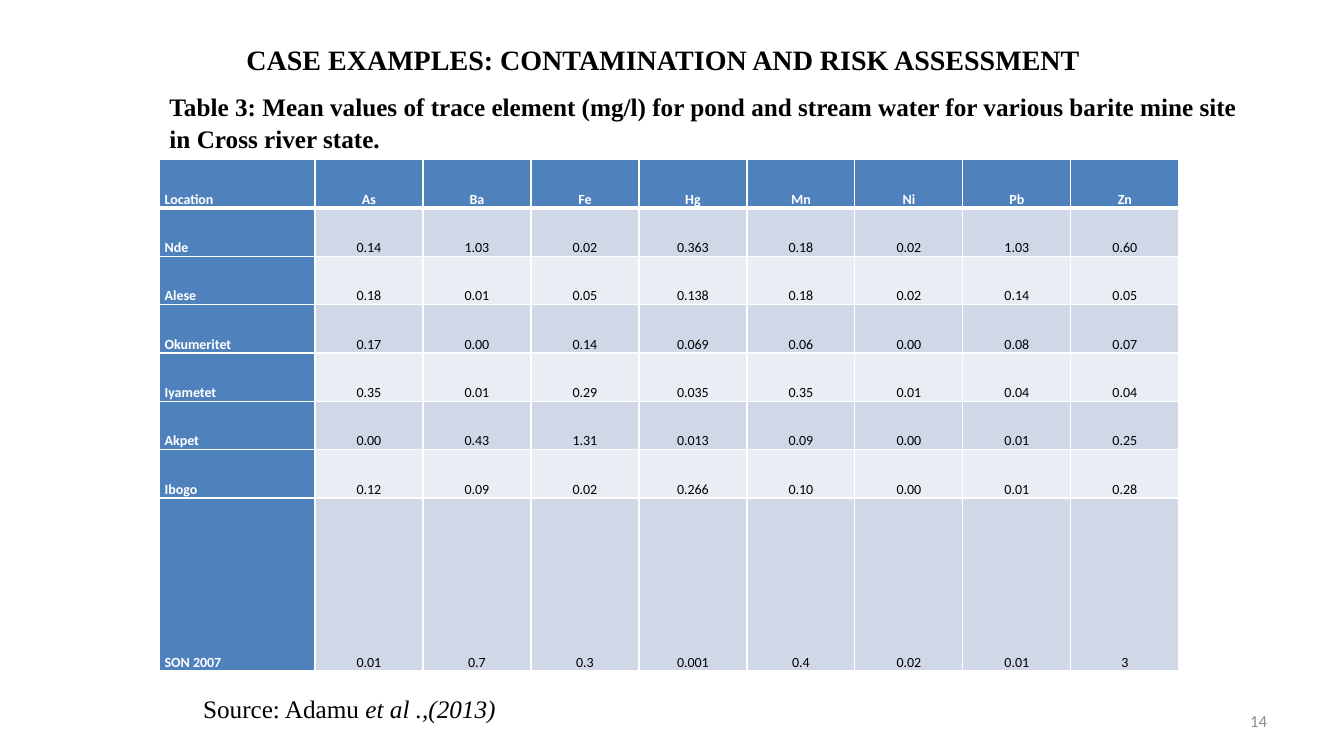
from dataclasses import dataclass

from lxml.etree import SubElement
from pptx import Presentation
from pptx.dml.color import RGBColor
from pptx.enum.text import MSO_ANCHOR as Anchor, PP_ALIGN as Align
from pptx.oxml.ns import qn
from pptx.slide import Slide
from pptx.table import _Cell as Cell
from pptx.text.text import _Paragraph as Paragraph
from pptx.util import Pt


@dataclass(frozen=True)
class Theme:
    serif: str = "Times New Roman"
    sans: str = "Calibri"
    black: str = "000000"
    white: str = "FFFFFF"
    grey: str = "8C8C8C"
    header: str = "4F81BD"
    bands: tuple[str, str] = ("D0D8E8", "E9EDF4")
    title_size: float = 20
    body_size: float = 18
    number_size: float = 12
    table_size: float = 10
    line_spacing: float = 1.07
    thin_border: float = 1
    thick_border: float = 3


THEME = Theme()


@dataclass(frozen=True)
class TextRun:
    text: str
    size: float
    font: str = THEME.serif
    color: str = THEME.black
    bold: bool = False
    italic: bool = False


@dataclass(frozen=True)
class TextBlock:
    left: float
    top: float
    width: float
    height: float
    runs: tuple[TextRun, ...]
    align: Align = Align.LEFT
    anchor: Anchor = Anchor.TOP
    line_spacing: float = 1.0


TEXT_BLOCKS = (
    TextBlock(149.76, 12, 648, 60,
              (TextRun("CASE EXAMPLES: CONTAMINATION AND RISK ASSESSMENT",
                       THEME.title_size, bold=True),),
              Align.CENTER, Anchor.MIDDLE),
    TextBlock(688.32, 500.4, 223.92, 28.8,
              (TextRun("14", THEME.number_size, THEME.sans, THEME.grey),),
              Align.RIGHT, Anchor.MIDDLE),
    TextBlock(114, 60, 786, 54,
              (TextRun("Table 3: Mean values of trace element (mg/l) for pond and stream water "
                       "for various barite mine site in Cross river state.",
                       THEME.body_size, bold=True),),
              line_spacing=THEME.line_spacing),
    TextBlock(138, 492, 444, 29,
              (TextRun("Source: Adamu ", THEME.body_size),
               TextRun("et al .,(2013)", THEME.body_size, italic=True))),
)

TABLE_LEFT, TABLE_TOP = 114, 114
LOCATION_WIDTH, ELEMENT_WIDTH = 111, 77.15
ROW_HEIGHT, LAST_ROW_HEIGHT = 34.55, 123.6
CELL_INSET = 3.6
MEAN_VALUES = (
    ("Location", "As", "Ba", "Fe", "Hg", "Mn", "Ni", "Pb", "Zn"),
    ("Nde", "0.14", "1.03", "0.02", "0.363", "0.18", "0.02", "1.03", "0.60"),
    ("Alese", "0.18", "0.01", "0.05", "0.138", "0.18", "0.02", "0.14", "0.05"),
    ("Okumeritet", "0.17", "0.00", "0.14", "0.069", "0.06", "0.00", "0.08", "0.07"),
    ("Iyametet", "0.35", "0.01", "0.29", "0.035", "0.35", "0.01", "0.04", "0.04"),
    ("Akpet", "0.00", "0.43", "1.31", "0.013", "0.09", "0.00", "0.01", "0.25"),
    ("Ibogo", "0.12", "0.09", "0.02", "0.266", "0.10", "0.00", "0.01", "0.28"),
    ("SON 2007", "0.01", "0.7", "0.3", "0.001", "0.4", "0.02", "0.01", "3"),
)


def add_run(paragraph: Paragraph, text_run: TextRun) -> None:
    run = paragraph.add_run()
    run.text = text_run.text
    run.font.name = text_run.font
    run.font.size = Pt(text_run.size)
    run.font.bold = text_run.bold
    run.font.italic = text_run.italic
    run.font.color.rgb = RGBColor.from_string(text_run.color)


def add_text(slide: Slide, block: TextBlock) -> None:
    shape = slide.shapes.add_textbox(
        Pt(block.left), Pt(block.top), Pt(block.width), Pt(block.height))
    frame = shape.text_frame
    frame.word_wrap = True
    frame.vertical_anchor = block.anchor
    paragraph = frame.paragraphs[0]
    paragraph.alignment = block.align
    paragraph.line_spacing = block.line_spacing
    for text_run in block.runs:
        add_run(paragraph, text_run)


def add_borders(cell: Cell, row: int) -> None:
    """Draw white borders, with a thick rule between the header and the body."""
    widths = {"a:lnL": THEME.thin_border, "a:lnR": THEME.thin_border,
              "a:lnT": THEME.thick_border if row == 1 else THEME.thin_border,
              "a:lnB": THEME.thick_border if row == 0 else THEME.thin_border}
    properties = cell._tc.get_or_add_tcPr()
    for tag, width in widths.items():
        line = SubElement(properties, qn(tag), w=str(Pt(width)))
        fill = SubElement(line, qn("a:solidFill"))
        SubElement(fill, qn("a:srgbClr"), val=THEME.white)


def style_cell(cell: Cell, text: str, row: int, column: int) -> None:
    is_heading = row == 0 or column == 0
    add_borders(cell, row)
    cell.fill.solid()
    cell.fill.fore_color.rgb = RGBColor.from_string(
        THEME.header if is_heading else THEME.bands[(row - 1) % 2])
    cell.margin_left = cell.margin_right = Pt(CELL_INSET)
    cell.margin_top = cell.margin_bottom = Pt(0)
    cell.vertical_anchor = Anchor.BOTTOM
    paragraph = cell.text_frame.paragraphs[0]
    paragraph.alignment = Align.CENTER if column else Align.LEFT
    paragraph.line_spacing = THEME.line_spacing
    add_run(paragraph, TextRun(text, THEME.table_size, THEME.sans,
                               THEME.white if is_heading else THEME.black, is_heading))


def add_mean_values_table(slide: Slide) -> None:
    row_count, column_count = len(MEAN_VALUES), len(MEAN_VALUES[0])
    widths = [LOCATION_WIDTH] + [ELEMENT_WIDTH] * (column_count - 1)
    heights = [ROW_HEIGHT] * (row_count - 1) + [LAST_ROW_HEIGHT]
    table = slide.shapes.add_table(
        row_count, column_count, Pt(TABLE_LEFT), Pt(TABLE_TOP),
        Pt(sum(widths)), Pt(sum(heights))).table
    table.first_col = True
    for table_column, width in zip(table.columns, widths):
        table_column.width = Pt(width)
    for table_row, height in zip(table.rows, heights):
        table_row.height = Pt(height)
    for row, texts in enumerate(MEAN_VALUES):
        for column, text in enumerate(texts):
            style_cell(table.cell(row, column), text, row, column)


def main() -> None:
    presentation = Presentation()
    presentation.slide_width, presentation.slide_height = Pt(960), Pt(540)
    slide = presentation.slides.add_slide(presentation.slide_layouts[6])
    add_mean_values_table(slide)
    for block in TEXT_BLOCKS:
        add_text(slide, block)
    presentation.save("out.pptx")


if __name__ == "__main__":
    main()
